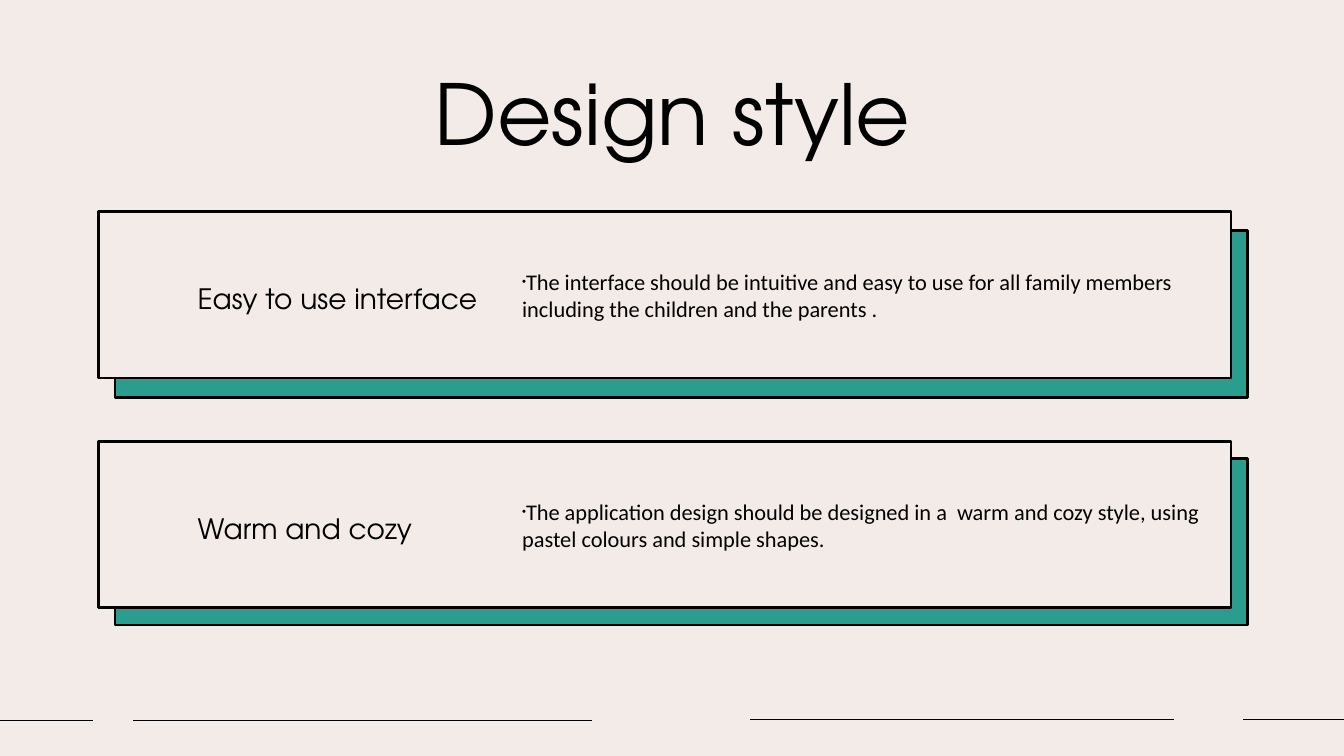
from lxml import etree
from pptx import Presentation
from pptx.dml.color import RGBColor
from pptx.enum import shapes, text
from pptx.oxml import ns
from pptx.util import Inches, Pt

TITLE = "Design style"
# heading, description, card top, backdrop top
CARDS = [
    ("Easy to use interface",
     "The interface should be intuitive and easy to use for all family members "
     "including the children and the parents .", 2.1, 2.29),
    ("Warm and cozy",
     "The application design should be designed in a  warm and cozy style, "
     "using pastel colours and simple shapes.", 4.38, 4.55),
]
# left, right, height of each footer rule
FOOTER_RULES = [(0, 0.92, 7.15), (1.32, 5.87, 7.15),
                (7.44, 11.64, 7.14), (12.33, 13.33, 7.14)]
COLORS = {"ink": "000000", "paper": "F3EBE8", "teal": "2A9D8F"}
HEADING_FONT, BODY_FONT = "TeX Gyre Adventor", "Calibri"
CARD_LEFT, BACKDROP_LEFT, CARD_WIDTH, CARD_HEIGHT = 0.98, 1.14, 11.23, 1.65
DESCRIPTION_LEFT, DESCRIPTION_WIDTH, DESCRIPTION_INSET = 5.08, 7.01, 0.1


def color(name):
    return RGBColor.from_string(COLORS[name])


def write(frame, words, font, size, align=text.PP_ALIGN.LEFT):
    """Put one run in the frame, centred vertically, and return its paragraph."""
    frame.word_wrap = True
    frame.auto_size = text.MSO_AUTO_SIZE.NONE
    frame.vertical_anchor = text.MSO_ANCHOR.MIDDLE
    paragraph = frame.paragraphs[0]
    paragraph.alignment = align
    run = paragraph.add_run()
    run.text = words
    run.font.name = font
    run.font.size = Pt(size)
    run.font.color.rgb = color("ink")
    return paragraph


def add_panel(slide, left, top, fill):
    panel = slide.shapes.add_shape(
        shapes.MSO_SHAPE.RECTANGLE, Inches(left), Inches(top),
        Inches(CARD_WIDTH), Inches(CARD_HEIGHT))
    panel.shadow.inherit = False
    panel.fill.solid()
    panel.fill.fore_color.rgb = color(fill)
    panel.line.color.rgb = color("ink")
    panel.line.width = Pt(2)
    return panel


def add_bullet(paragraph):
    """Give the paragraph a half-size bullet that hangs to the left."""
    props = paragraph._p.get_or_add_pPr()
    props.set("marL", "0")
    props.set("indent", str(-Inches(0.15)))
    for tag, key, value in [("a:buSzPct", "val", "50000"),
                            ("a:buFont", "typeface", "Arial"),
                            ("a:buChar", "char", "•")]:
        etree.SubElement(props, ns.qn(tag)).set(key, value)


def add_card(slide, heading, description, top):
    card = add_panel(slide, CARD_LEFT, top, "paper")
    frame = card.text_frame
    frame.margin_left, frame.margin_right = Inches(0.98), Inches(7.1)
    frame.margin_top = frame.margin_bottom = Inches(0.05)
    write(frame, heading, HEADING_FONT, 20).line_spacing = 1.2

    detail = slide.shapes.add_textbox(
        Inches(DESCRIPTION_LEFT), Inches(top + DESCRIPTION_INSET),
        Inches(DESCRIPTION_WIDTH), Inches(CARD_HEIGHT - 2 * DESCRIPTION_INSET))
    add_bullet(write(detail.text_frame, description, BODY_FONT, 16))


def add_footer_rule(slide, left, right, height):
    rule = slide.shapes.add_connector(
        shapes.MSO_CONNECTOR.STRAIGHT, Inches(left), Inches(height),
        Inches(right), Inches(height))
    rule.line.color.rgb = color("ink")
    rule.line.width = Pt(1)
    etree.SubElement(rule._element.spPr, ns.qn("a:effectLst"))


def main():
    deck = Presentation()
    deck.slide_width, deck.slide_height = Inches(13.33), Inches(7.5)
    slide = deck.slides.add_slide(deck.slide_layouts[5])
    slide.background.fill.solid()
    slide.background.fill.fore_color.rgb = color("paper")

    title = slide.shapes.title
    title.left, title.top = Inches(1.25), Inches(0.56)
    title.width, title.height = Inches(10.84), Inches(1.11)
    write(title.text_frame, TITLE, HEADING_FONT, 60, text.PP_ALIGN.CENTER)

    for rule in FOOTER_RULES:
        add_footer_rule(slide, *rule)
    for heading, description, top, backdrop_top in CARDS:
        add_panel(slide, BACKDROP_LEFT, backdrop_top, "teal")
        add_card(slide, heading, description, top)
    deck.save("out.pptx")


if __name__ == "__main__":
    main()
